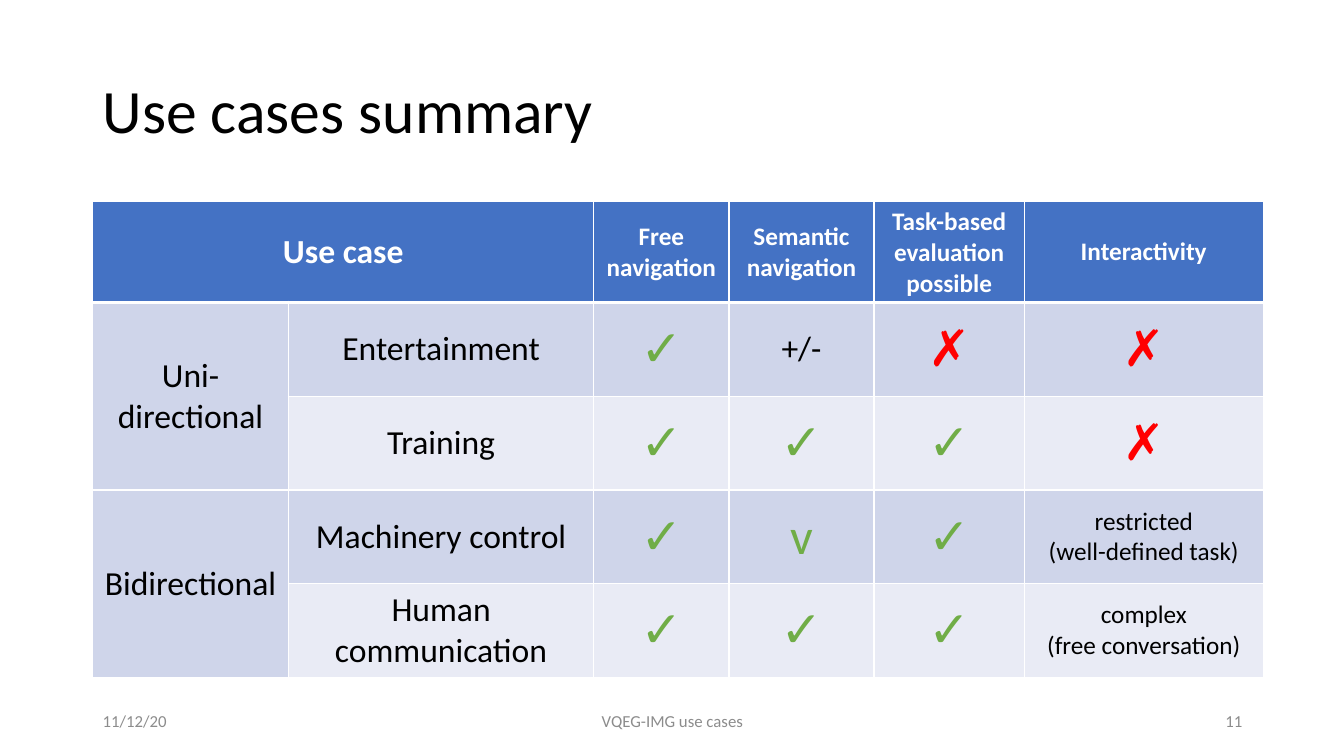
from lxml import etree
from pptx import Presentation
from pptx.dml.color import RGBColor
from pptx.enum.text import MSO_ANCHOR, PP_ALIGN
from pptx.oxml.ns import qn
from pptx.util import Pt

PX = 9144
LEFT, MID, RIGHT = PP_ALIGN.LEFT, PP_ALIGN.CENTER, PP_ALIGN.RIGHT
CENTER = MSO_ANCHOR.MIDDLE
WHITE, BLACK, GREY = "FFFFFF", "000000", "8C8C8C"
BLUE, DARK, LIGHT = "4472C4", "CFD5EA", "E9EBF5"
GREEN, RED = "70AD47", "FF0000"

COLS = [194, 303, 134, 144, 149, 237]
ROWS = [100, 93, 93, 93, 93]
MERGES = [(0, 0, 0, 1), (1, 0, 2, 0), (3, 0, 4, 0)]
CELLS = [
    ["Use case", "", "Free navigation", "Semantic navigation",
     "Task-based evaluation possible", "Interactivity"],
    ["Uni-directional", "Entertainment", "✓", "+/-", "✗", "✗"],
    ["", "Training", "✓", "✓", "✓", "✗"],
    ["Bidirectional", "Machinery control", "✓", "v", "✓",
     "restricted\n(well-defined task)"],
    ["", "Human communication", "✓", "✓", "✓",
     "complex\n(free conversation)"],
]
MARKS = {
    "✓": dict(size=Pt(36), bold=True, color=GREEN),
    "v": dict(size=Pt(36), bold=False, color=GREEN),
    "✗": dict(size=Pt(36), bold=False, color=RED),
}


def paint(hue):
    return RGBColor.from_string(hue)


def write(frame, text, align, style):
    for i, line in enumerate(text.split("\n")):
        para = frame.paragraphs[0] if i == 0 else frame.add_paragraph()
        para.alignment = align
        run = para.add_run()
        run.text = line
        run.font.name = "Calibri"
        for key, value in style.items():
            if key == "color":
                run.font.color.rgb = paint(value)
            else:
                setattr(run.font, key, value)


def add_text(slide, box, text, align, style):
    frame = slide.shapes.add_textbox(*[n * PX for n in box]).text_frame
    frame.word_wrap = True
    frame.vertical_anchor = CENTER
    write(frame, text, align, style)
    return frame


def add_title(slide, box):
    style = dict(size=Pt(44), color=BLACK)
    frame = add_text(slide, box, "Use cases summary", LEFT, style)
    frame.paragraphs[0].line_spacing = 0.9


def pick(text, row, col):
    if row == 0:
        return dict(size=Pt(18 if col else 24), bold=True, color=WHITE)
    if text in MARKS:
        return MARKS[text]
    return dict(size=Pt(18 if "\n" in text else 24), bold=False, color=BLACK)


def add_edges(cell, row):
    props = cell._tc.get_or_add_tcPr()
    for i, side in enumerate("LRTB"):
        thick = (row, side) in [(0, "B"), (1, "T")]
        line = etree.Element(qn("a:ln" + side), w=str(Pt(3 if thick else 1)))
        fill = etree.SubElement(line, qn("a:solidFill"))
        etree.SubElement(fill, qn("a:srgbClr"), val=WHITE)
        props.insert(i, line)


def add_grid(slide, box):
    spot = [n * PX for n in box]
    table = slide.shapes.add_table(len(ROWS), len(COLS), *spot).table
    for col, width in zip(table.columns, COLS):
        col.width = width * PX
    for row, height in zip(table.rows, ROWS):
        row.height = height * PX
    for top, left, low, right in MERGES:
        table.cell(top, left).merge(table.cell(low, right))
    for r, line in enumerate(CELLS):
        for c, text in enumerate(line):
            cell = table.cell(r, c)
            cell.fill.solid()
            hue = BLUE if r == 0 else DARK if r % 2 else LIGHT
            cell.fill.fore_color.rgb = paint(hue)
            cell.vertical_anchor = CENTER
            add_edges(cell, r)
            if text:
                write(cell.text_frame, text, MID, pick(text, r, c))


def add_foot(slide, box):
    left, top, width, height = box
    style = dict(size=Pt(12), color=GREY)
    side, wide = 300, 450
    parts = [
        (left, side, "11/12/20", LEFT),
        (left + (width - wide) // 2, wide, "VQEG-IMG use cases", MID),
        (left + width - side, side, "11", RIGHT),
    ]
    for x, span, text, align in parts:
        add_text(slide, (x, top, span, height), text, align, style)


def main():
    deck = Presentation()
    deck.slide_width, deck.slide_height = 1333 * PX, 750 * PX
    slide = deck.slides.add_slide(deck.slide_layouts[6])
    add_title(slide, (92, 40, 1150, 145))
    add_grid(slide, (92, 200, sum(COLS), sum(ROWS)))
    add_foot(slide, (92, 695, 1150, 40))
    deck.save("out.pptx")


if __name__ == "__main__":
    main()
